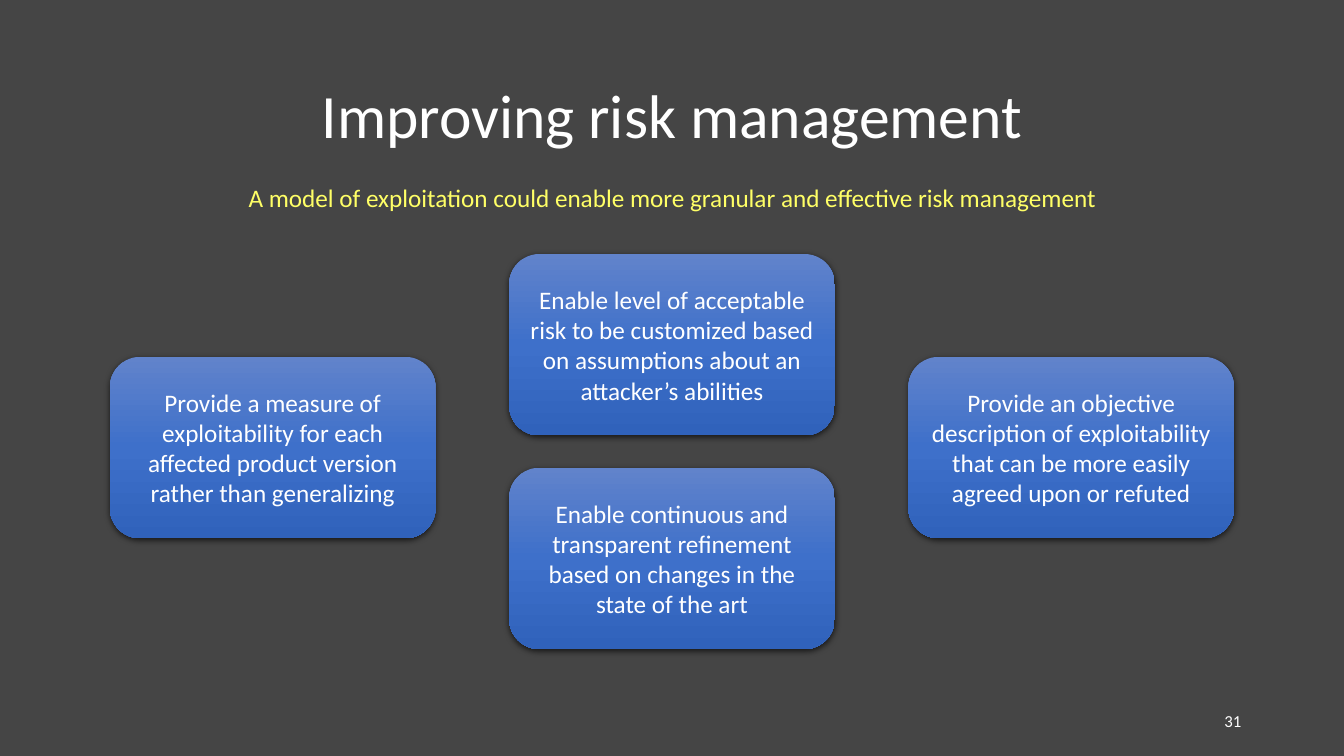
from copy import deepcopy

from lxml import etree
from pptx import Presentation
from pptx.dml.color import RGBColor
from pptx.enum.shapes import MSO_SHAPE
from pptx.enum.text import MSO_ANCHOR, PP_ALIGN
from pptx.oxml.ns import qn
from pptx.util import Inches, Pt

CENTER, RIGHT = PP_ALIGN.CENTER, PP_ALIGN.RIGHT
TOP, MIDDLE = MSO_ANCHOR.TOP, MSO_ANCHOR.MIDDLE
ROUNDED = MSO_SHAPE.ROUNDED_RECTANGLE

FONT = "Calibri"
BACKGROUND, WHITE, YELLOW, BLACK = "454545", "FFFFFF", "FFFF66", "000000"
BLUES = ["6183CB", "3E70CA", "3062BB"]

CARD_W, CARD_H = 3.23, 1.8
COLUMN_STEP = 3.96
ROW_TOPS = [0, 1.02, 2.12]
# (column, row, text)
CARDS = [
    (0, 1, "Provide a measure of exploitability for each affected product "
           "version rather than generalizing"),
    (1, 0, "Enable level of acceptable risk to be customized based on "
           "assumptions about an attacker’s abilities"),
    (2, 1, "Provide an objective description of exploitability that can be "
           "more easily agreed upon or refuted"),
    (1, 2, "Enable continuous and transparent refinement based on changes in "
           "the state of the art"),
]


def color(hex_code):
    return RGBColor.from_string(hex_code)


def write(s, text, size=18, fill=WHITE, align=CENTER, anchor=MIDDLE, wrap=True):
    tf = s.text_frame
    tf.word_wrap = wrap
    tf.vertical_anchor = anchor
    p = tf.paragraphs[0]
    p.alignment = align
    r = p.add_run()
    r.text = text
    r.font.name = FONT
    r.font.size = Pt(size)
    r.font.color.rgb = color(fill)


def add_text(slide, box, text, **text_format):
    s = slide.shapes.add_textbox(*map(Inches, box))
    write(s, text, **text_format)


def fill_gradient(s, hex_codes):
    """Fill from top to bottom with evenly spaced colours."""
    s.fill.gradient()
    s.fill.gradient_angle = 270
    stop_list = s._element.spPr.find(".//" + qn("a:gsLst"))
    for _ in hex_codes[2:]:
        stop_list.append(deepcopy(stop_list[-1]))
    for i, (stop, code) in enumerate(zip(s.fill.gradient_stops, hex_codes)):
        stop.position = i / (len(hex_codes) - 1)
        stop.color.rgb = color(code)


def add_soft_shadow(s):
    s.shadow.inherit = False
    effects = s._element.spPr.find(qn("a:effectLst"))
    shadow = etree.SubElement(
        effects, qn("a:outerShdw"), blurRad=str(Pt(4.5)), dist=str(Pt(1.5)),
        dir="5400000", algn="ctr", rotWithShape="0")
    tint = etree.SubElement(shadow, qn("a:srgbClr"), val=BLACK)
    etree.SubElement(tint, qn("a:alpha"), val="63000")


def add_card(slide, box, text):
    s = slide.shapes.add_shape(ROUNDED, *map(Inches, box))
    s.line.fill.background()
    fill_gradient(s, BLUES)
    add_soft_shadow(s)
    write(s, text)


def add_heading(slide, box):
    left, top, width, height = box
    add_text(slide, (left, top, width, 1.45), "Improving risk management", size=44)
    add_text(slide, (left, top + height - 0.4, width, 0.4),
             "A model of exploitation could enable more granular and effective "
             "risk management", fill=YELLOW, anchor=TOP, wrap=False)


def add_cards(slide, left, top):
    for column, row, text in CARDS:
        box = (left + column * COLUMN_STEP, top + ROW_TOPS[row], CARD_W, CARD_H)
        add_card(slide, box, text)


def main():
    prs = Presentation()
    prs.slide_width, prs.slide_height = Inches(13.33), Inches(7.5)
    slide = prs.slides.add_slide(prs.slide_layouts[6])
    slide.background.fill.solid()
    slide.background.fill.fore_color.rgb = color(BACKGROUND)

    add_heading(slide, (0.92, 0.4, 11.5, 1.76))
    add_cards(slide, 1.09, 2.52)
    add_text(slide, (8.83, 6.95, 3.58, 0.4), "31", size=12, align=RIGHT)
    prs.save("out.pptx")


if __name__ == "__main__":
    main()
